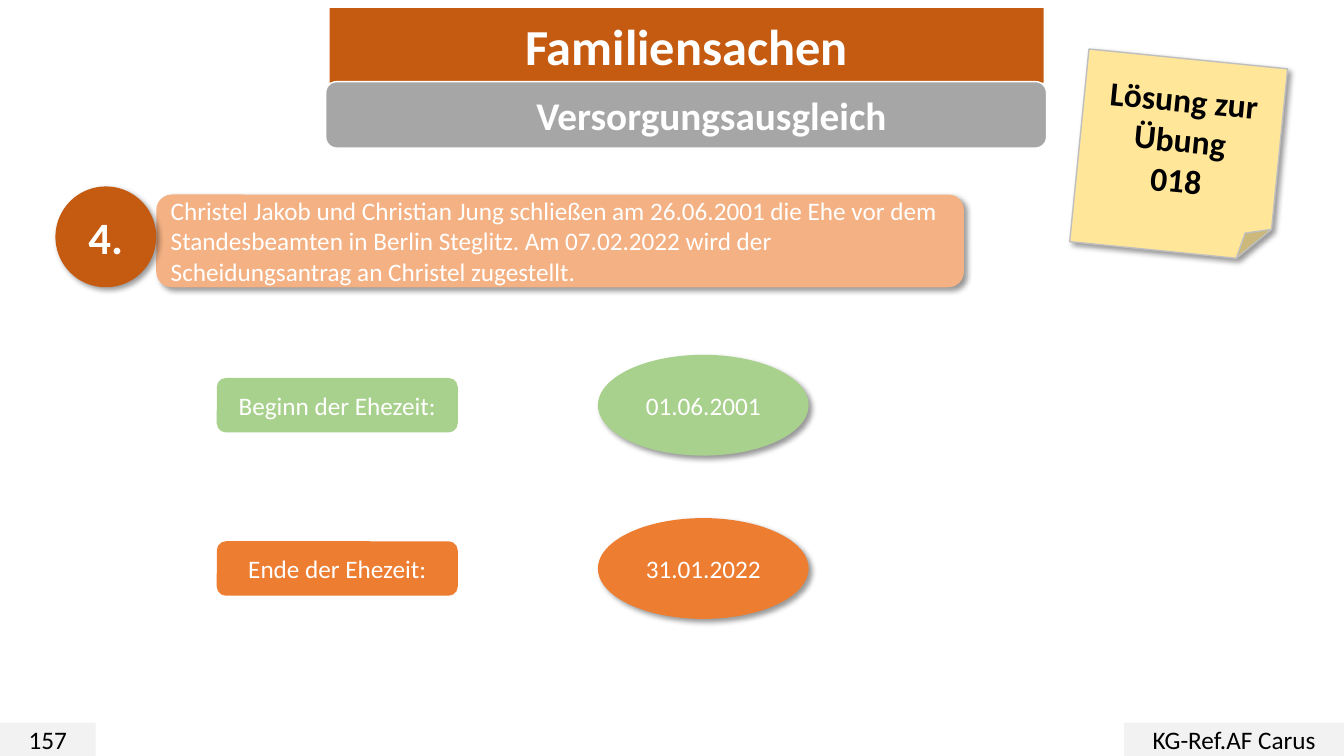
"""Build the slide on the marital period for pension equalisation."""
from dataclasses import dataclass
from typing import Optional

from lxml import etree
from pptx import Presentation
from pptx import util as u
from pptx.dml.color import RGBColor
from pptx.enum import shapes, text
from pptx.oxml import ns

EMU_PER_PX = 9144
WHITE = RGBColor(0xFF, 0xFF, 0xFF)
BLACK = RGBColor(0x00, 0x00, 0x00)
RUST = RGBColor(0xC5, 0x5A, 0x11)
ORANGE = RGBColor(0xED, 0x7D, 0x31)
PEACH = RGBColor(0xF4, 0xB1, 0x83)
GREEN = RGBColor(0xA9, 0xD1, 0x8E)
YELLOW = RGBColor(0xFF, 0xE6, 0x99)
GREY = RGBColor(0xA6, 0xA6, 0xA6)
SILVER = RGBColor(0xBF, 0xBF, 0xBF)
PALE = RGBColor(0xF2, 0xF2, 0xF2)

RECT = shapes.MSO_SHAPE.RECTANGLE
ROUND = shapes.MSO_SHAPE.ROUNDED_RECTANGLE
OVAL = shapes.MSO_SHAPE.OVAL
NOTE = shapes.MSO_SHAPE.FOLDED_CORNER
LEFT = text.PP_ALIGN.LEFT
CENTER = text.PP_ALIGN.CENTER


@dataclass(frozen=True)
class Card:
    """A filled shape with its text and format."""

    kind: shapes.MSO_SHAPE
    left: int
    top: int
    width: int
    height: int
    fill: RGBColor
    words: str
    size: int = 18
    color: RGBColor = WHITE
    bold: bool = False
    align: text.PP_ALIGN = CENTER
    line: Optional[RGBColor] = None
    shadow: bool = False
    rotation: float = 0
    inset: int = 10


TITLE = Card(ROUND, 327, 8, 708, 74, RUST, "Familiensachen", size=36, bold=True)
FRAME = [
    Card(RECT, 0, 717, 95, 33, PALE, "157", color=BLACK),
    Card(RECT, 1115, 717, 218, 33, PALE, "KG-Ref.AF Carus", color=BLACK),
    Card(ROUND, 323, 81, 715, 66, GREY, "Versorgungsausgleich", size=28,
         bold=True, line=WHITE, inset=60),
    Card(NOTE, 1070, 58, 198, 192, YELLOW, "Lösung zur\nÜbung\n018", size=24,
         color=BLACK, bold=True, line=SILVER, shadow=True, rotation=5.7),
]
CASE = [
    Card(ROUND, 155, 193, 801, 92, PEACH,
         "Christel Jakob und Christian Jung schließen am 26.06.2001 die Ehe "
         "vor dem Standesbeamten in Berlin Steglitz. Am 07.02.2022 wird der "
         "Scheidungsantrag an Christel zugestellt.", align=LEFT, shadow=True),
    Card(OVAL, 55, 185, 100, 100, RUST, "4.", size=32, bold=True, shadow=True),
]
PERIOD = [
    ("Beginn der Ehezeit:", "01.06.2001", GREEN),
    ("Ende der Ehezeit:", "31.01.2022", ORANGE),
]
PERIOD_TOP = 352
PERIOD_STEP = 162


def px(length: int) -> u.Emu:
    """Turn px into EMU."""
    return u.Emu(length * EMU_PER_PX)


def write(shape, words: str, *, size: int, color: RGBColor, bold: bool,
          align: text.PP_ALIGN, inset: int) -> None:
    """Fill a shape with formatted paragraphs, one for each line of words."""
    frame = shape.text_frame
    frame.word_wrap = True
    frame.auto_size = text.MSO_AUTO_SIZE.NONE
    frame.vertical_anchor = text.MSO_ANCHOR.MIDDLE
    frame.margin_left, frame.margin_right = px(inset), px(10)
    frame.margin_top = frame.margin_bottom = px(5)
    frame.text = words
    for para in frame.paragraphs:
        para.alignment = align
        for span in para.runs:
            font = span.font
            font.name, font.size, font.bold = "Calibri", u.Pt(size), bold
            font.color.rgb = color


def add_shadow(shape) -> None:
    """Give a shape a soft shadow to the lower right."""
    effects = shape._element.spPr.find(ns.qn("a:effectLst"))
    outer = etree.SubElement(
        effects, ns.qn("a:outerShdw"), blurRad=str(u.Pt(4)),
        dist=str(u.Pt(3)), dir=str(45 * 60000), algn="tl", rotWithShape="0")
    color = etree.SubElement(outer, ns.qn("a:srgbClr"), val=str(BLACK))
    etree.SubElement(color, ns.qn("a:alpha"), val="40000")


def paint(shape, card: Card) -> None:
    """Apply the fill, line and text of a card."""
    shape.fill.solid()
    shape.fill.fore_color.rgb = card.fill
    if card.line is None:
        shape.line.fill.background()
    else:
        shape.line.color.rgb = card.line
        shape.line.width = u.Pt(1)
    write(shape, card.words, size=card.size, color=card.color, bold=card.bold,
          align=card.align, inset=card.inset)


def place_title(title, card: Card) -> None:
    """Move the title placeholder and give it a rounded outline."""
    title.left, title.top = px(card.left), px(card.top)
    title.width, title.height = px(card.width), px(card.height)
    outline = etree.SubElement(title._element.spPr, ns.qn("a:prstGeom"),
                               prst="roundRect")
    etree.SubElement(outline, ns.qn("a:avLst"))
    paint(title, card)


def add_card(target, card: Card) -> None:
    """Add a card to a collection of shapes."""
    shape = target.add_shape(card.kind, px(card.left), px(card.top),
                             px(card.width), px(card.height))
    shape.rotation = card.rotation
    shape.shadow.inherit = False
    paint(shape, card)
    if card.shadow:
        add_shadow(shape)


def main() -> None:
    """Build and save the deck."""
    deck = Presentation()
    deck.slide_width, deck.slide_height = px(1333), px(750)
    page = deck.slides.add_slide(deck.slide_layouts[5])
    place_title(page.shapes.title, TITLE)
    for card in FRAME:
        add_card(page.shapes, card)
    group = page.shapes.add_group_shape()
    for card in CASE:
        add_card(group.shapes, card)
    for row, (label, date, fill) in enumerate(PERIOD):
        top = PERIOD_TOP + row * PERIOD_STEP
        add_card(page.shapes, Card(ROUND, 215, top + 23, 239, 54, fill, label))
        add_card(page.shapes,
                 Card(OVAL, 593, top, 209, 100, fill, date, shadow=True))
    deck.save("out.pptx")


if __name__ == "__main__":
    main()
